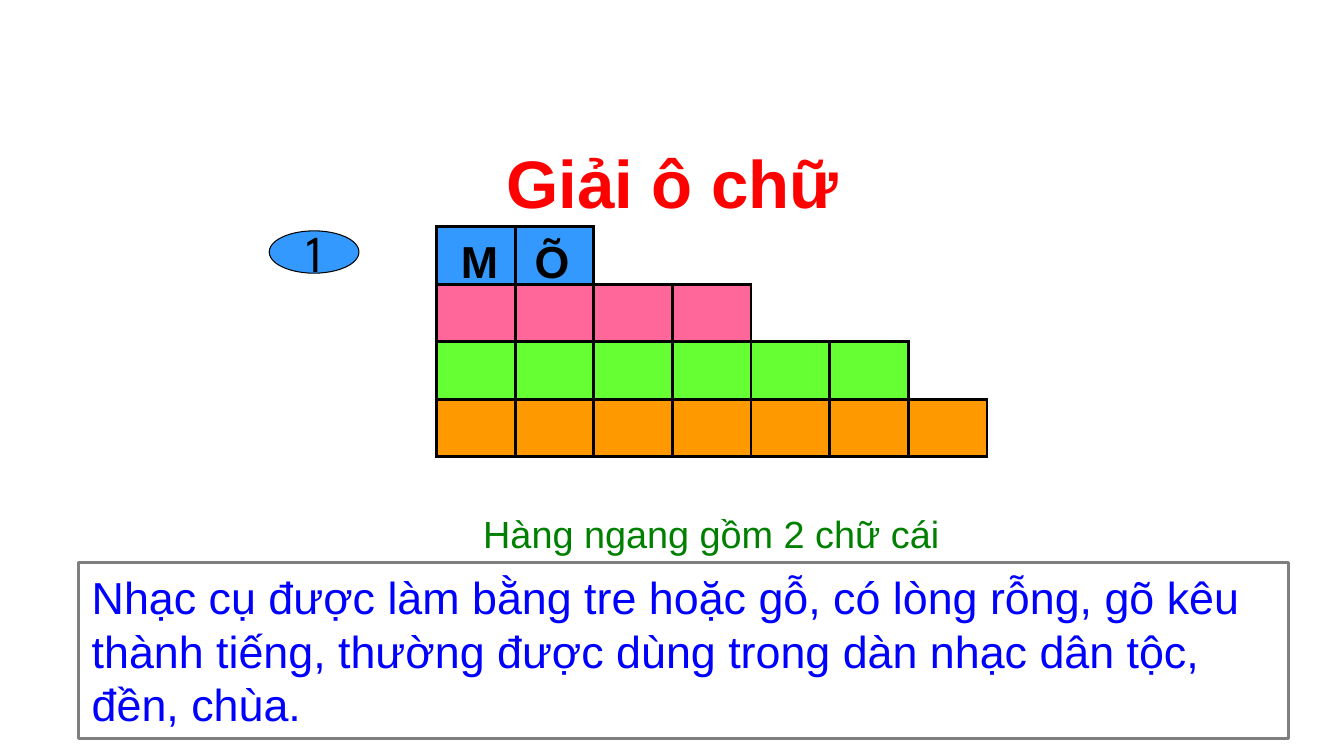
from lxml import etree
from pptx import Presentation
from pptx.dml.color import RGBColor
from pptx.enum.shapes import MSO_SHAPE
from pptx.enum.text import MSO_ANCHOR, MSO_AUTO_SIZE, PP_ALIGN
from pptx.oxml.ns import qn
from pptx.util import Inches, Pt

LEFT, CENTER = PP_ALIGN.LEFT, PP_ALIGN.CENTER
TOP, MIDDLE = MSO_ANCHOR.TOP, MSO_ANCHOR.MIDDLE
RECTANGLE, OVAL = MSO_SHAPE.RECTANGLE, MSO_SHAPE.OVAL
NO_AUTOFIT = MSO_AUTO_SIZE.NONE

BLACK = RGBColor(0x00, 0x00, 0x00)
RED = RGBColor(0xFF, 0x00, 0x00)
DARK_GREEN = RGBColor(0x00, 0x80, 0x00)
BLUE = RGBColor(0x00, 0x00, 0xFF)
GRAY = RGBColor(0x7F, 0x7F, 0x7F)
SKY = RGBColor(0x33, 0x99, 0xFF)
PINK = RGBColor(0xFF, 0x66, 0x99)
LIME = RGBColor(0x66, 0xFF, 0x33)
ORANGE = RGBColor(0xFF, 0x99, 0x00)

# Crossword grid, in inches
GRID_LEFT, GRID_TOP = 4.33, 2.25
CELL_WIDTH, CELL_HEIGHT = 0.78, 0.57
CROSSWORD = [(2, SKY), (4, PINK), (6, LIME), (7, ORANGE)]


def place(shape, left, top, width, height):
    shape.left, shape.top = Inches(left), Inches(top)
    shape.width, shape.height = Inches(width), Inches(height)


def write(shape, text, size, color, align=CENTER, bold=False,
          font_name="Arial", anchor=TOP, wrap=True):
    frame = shape.text_frame
    frame.text = text
    frame.auto_size = NO_AUTOFIT
    frame.word_wrap = wrap
    frame.vertical_anchor = anchor
    frame.margin_left = frame.margin_right = Inches(0.13)
    frame.margin_top = frame.margin_bottom = Inches(0.07)
    paragraph = frame.paragraphs[0]
    paragraph.alignment = align
    font = paragraph.font
    font.name, font.size, font.bold = font_name, Pt(size), bold
    font.color.rgb = color


def add_text(slide, box, text, size, color, **style):
    shape = slide.shapes.add_textbox(*map(Inches, box))
    write(shape, text, size, color, **style)


def add_outlined(slide, kind, box, line_color, line_width, fill=None):
    shape = slide.shapes.add_shape(kind, *map(Inches, box))
    shape.shadow.inherit = False
    if fill is None:
        shape.fill.background()
    else:
        shape.fill.solid()
        shape.fill.fore_color.rgb = fill
    shape.line.color.rgb = line_color
    shape.line.width = Pt(line_width)
    return shape


def add_borders(cell, color, width):
    properties = cell._tc.get_or_add_tcPr()
    for index, side in enumerate(("a:lnL", "a:lnR", "a:lnT", "a:lnB")):
        line = etree.Element(qn(side), w=str(Pt(width)))
        fill = etree.SubElement(line, qn("a:solidFill"))
        etree.SubElement(fill, qn("a:srgbClr"), val=str(color))
        properties.insert(index, line)


def add_crossword_row(slide, row, cell_count, color):
    frame = slide.shapes.add_table(
        1, cell_count, Inches(GRID_LEFT), Inches(GRID_TOP + row * CELL_HEIGHT),
        Inches(cell_count * CELL_WIDTH), Inches(CELL_HEIGHT))
    table = frame.table
    table.first_row = table.horz_banding = False
    for cell in table.iter_cells():
        cell.fill.solid()
        cell.fill.fore_color.rgb = color
        add_borders(cell, BLACK, 2.25)


def main():
    presentation = Presentation()
    presentation.slide_width = Inches(13.33)
    presentation.slide_height = Inches(7.5)
    slide = presentation.slides.add_slide(presentation.slide_layouts[5])

    # Title
    title = slide.shapes.title
    place(title, 4.56, 1.33, 4.22, 0.92)
    write(title, "Giải ô chữ", 48, RED, bold=True, wrap=False)

    # Clue
    add_text(slide, (4.11, 5, 5.89, 0.58), "Hàng ngang gồm 2 chữ cái",
             27, DARK_GREEN)
    clue = add_outlined(slide, RECTANGLE, (0.78, 5.58, 12, 1.75), GRAY, 2.25)
    write(clue, "Nhạc cụ được làm bằng tre hoặc gỗ, có lòng rỗng, gõ kêu "
          "thành tiếng, thường được dùng trong dàn nhạc dân tộc, đền, chùa.",
          32, BLUE, align=LEFT)

    # Crossword rows and row number
    for row, (cell_count, color) in enumerate(CROSSWORD):
        add_crossword_row(slide, row, cell_count, color)
    number = add_outlined(slide, OVAL, (2.67, 2.29, 0.89, 0.42),
                          BLACK, 0.75, fill=SKY)
    write(number, "1", 37, BLACK, font_name="League Spartan",
          anchor=MIDDLE, wrap=False)

    # Answer letters
    for letter, left, align in (("M", 4.44, LEFT), ("Õ", 5.15, CENTER)):
        add_text(slide, (left, GRID_TOP, 0.65, 0.67), letter, 32, BLACK,
                 align=align, bold=True)

    presentation.save("out.pptx")


if __name__ == "__main__":
    main()
